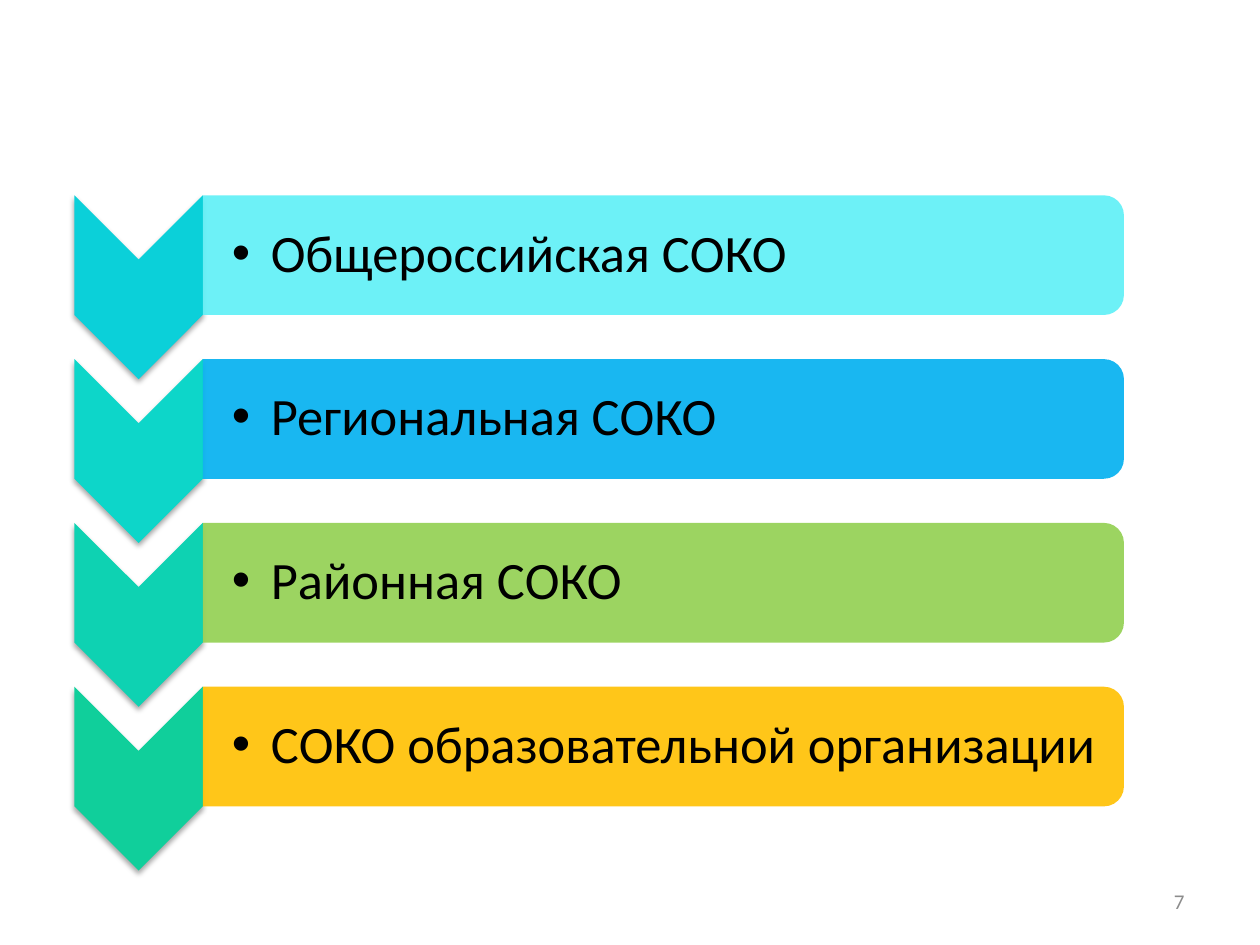
from lxml import etree
from pptx import Presentation
from pptx import util as u
from pptx.dml.color import RGBColor
from pptx.enum import shapes, text
from pptx.oxml.ns import qn

LEVELS = [
    ("Общероссийская СОКО", "0BD0D9", "5EF0F7"),
    ("Региональная СОКО", "0DD6C9", "00B0F0"),
    ("Районная СОКО", "0ED2B2", "92D050"),
    ("СОКО образовательной организации", "10CF9B", "FFC000"),
]
PAGE = "7"
FONT = "Calibri"

WIDTH, HEIGHT = 10, 7.5
LEFT, TOP, STEP = 0.59, 1.55, 1.3
ARROW_W, ARROW_H = 1.02, 1.46
BAR_W, BAR_H = 7.31, 0.95
TEXT_W, TEXT_H = 7.26, 0.86
INDENT = 0.31


def color(code):
    return RGBColor.from_string(code)


def add(parent, tag, **attrs):
    return etree.SubElement(parent, qn(tag), {k: str(v) for k, v in attrs.items()})


def turned(slide, kind, x, y, w, h, fill):
    """Add a shape rotated by 90 degrees that shows in the box x, y, w, h."""
    shape = slide.shapes.add_shape(
        kind, u.Inches(x + (w - h) / 2), u.Inches(y + (h - w) / 2),
        u.Inches(h), u.Inches(w))
    shape.rotation = 90
    shape.shadow.inherit = False
    shape.fill.solid()
    shape.fill.fore_color.rgb = color(fill)
    shape.line.fill.background()
    return shape


def cast(shape):
    """Give the shape a soft shadow straight below it."""
    effects = shape._element.spPr.find(qn("a:effectLst"))
    shadow = add(effects, "a:outerShdw", blurRad=u.Pt(3.1), dist=u.Pt(1.8),
                 dir=5400000, rotWithShape=0)
    tint = add(shadow, "a:srgbClr", val="000000")
    add(tint, "a:alpha", val=35000)


def fade(shape, share):
    tint = shape._element.spPr.find(qn("a:solidFill"))[0]
    add(tint, "a:alpha", val=int(share * 100000))


def write(slide, words, x, y, w, h, size, code):
    box = slide.shapes.add_textbox(*map(u.Inches, (x, y, w, h)))
    frame = box.text_frame
    frame.word_wrap = True
    frame.vertical_anchor = text.MSO_ANCHOR.MIDDLE
    frame.text = words
    font = frame.paragraphs[0].runs[0].font
    font.name, font.size, font.color.rgb = FONT, u.Pt(size), color(code)
    return frame


def bullet(frame):
    frame.margin_left = u.Inches(0.23)
    frame.margin_right = frame.margin_top = frame.margin_bottom = u.Inches(0.02)
    para = frame.paragraphs[0]
    para.line_spacing = 0.9
    props = para._p.get_or_add_pPr()
    props.set("marL", str(u.Inches(INDENT)))
    props.set("indent", str(-u.Inches(INDENT)))
    add(props, "a:buFont", typeface="Arial")
    add(props, "a:buChar", char="•")


def main():
    deck = Presentation()
    deck.slide_width, deck.slide_height = u.Inches(WIDTH), u.Inches(HEIGHT)
    slide = deck.slides.add_slide(deck.slide_layouts[6])
    kinds = shapes.MSO_SHAPE
    edge = LEFT + ARROW_W

    for row, (name, dark, light) in enumerate(LEVELS):
        y = TOP + row * STEP
        cast(turned(slide, kinds.CHEVRON, LEFT, y, ARROW_W, ARROW_H, dark))
        bar = turned(slide, kinds.ROUND_2_SAME_RECTANGLE, edge, y, BAR_W, BAR_H, light)
        fade(bar, 0.9)
        mid = y + (BAR_H - TEXT_H) / 2
        bullet(write(slide, name, edge, mid, TEXT_W, TEXT_H, 30, "000000"))

    page = write(slide, PAGE, 7.17, 6.95, 2.33, 0.4, 12, "8C8C8C")
    page.paragraphs[0].alignment = text.PP_ALIGN.RIGHT
    deck.save("out.pptx")


if __name__ == "__main__":
    main()
